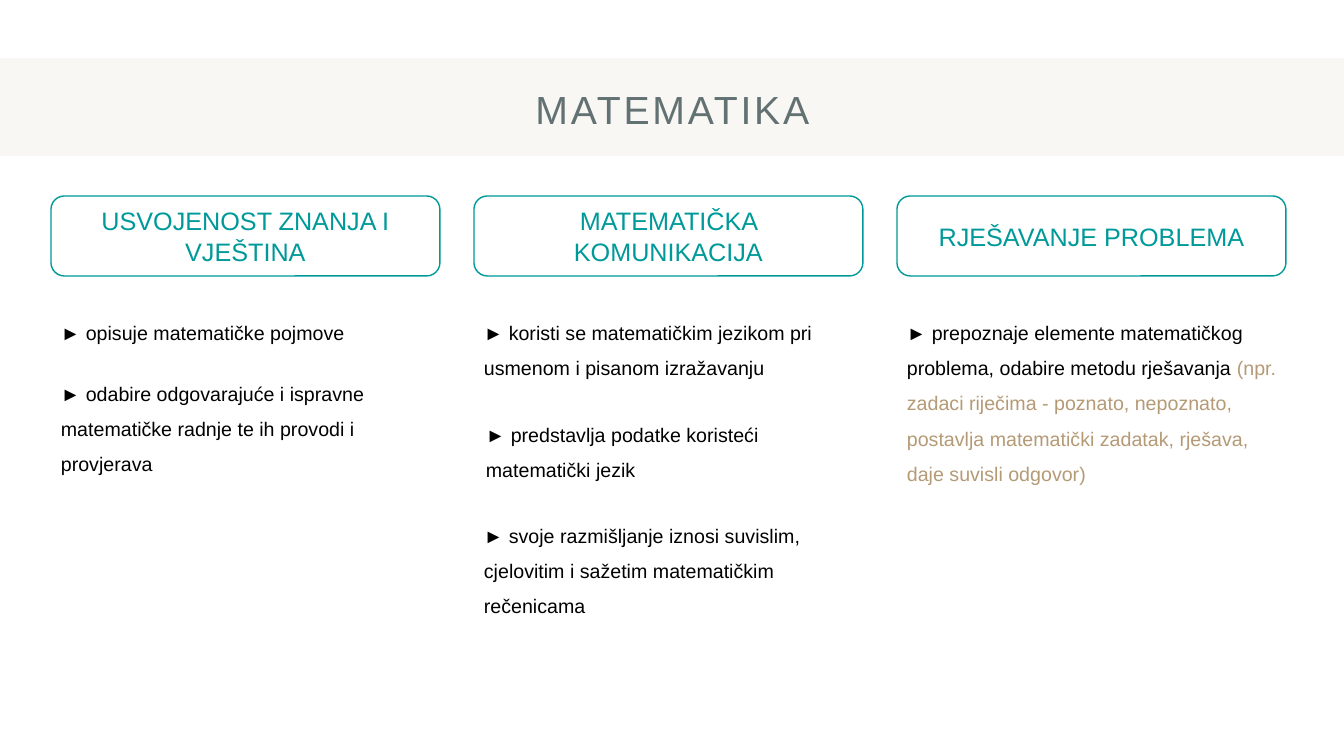
from lxml.etree import SubElement
from pptx import Presentation
from pptx.dml.color import RGBColor
from pptx.enum.shapes import MSO_SHAPE as Shape
from pptx.enum.text import MSO_ANCHOR as Anchor, MSO_AUTO_SIZE as AutoSize, PP_ALIGN as Align
from pptx.oxml.ns import qn
from pptx.util import Emu, Pt

SAND = RGBColor(0xD8, 0xCA, 0xB7)
SLATE = RGBColor(0x62, 0x72, 0x72)
TEAL = RGBColor(0x00, 0x99, 0x99)
BLACK = RGBColor(0x00, 0x00, 0x00)
TAN = RGBColor(0xB5, 0x9A, 0x76)

SLIDE_WIDTH, SLIDE_HEIGHT = 1344, 756
COLUMN_LEFT, COLUMN_PITCH, COLUMN_WIDTH = 51, 423, 389
HEADING_TOP, HEADING_HEIGHT = 196, 80

# Each column: heading, statement width, statements.
# Each statement: indent, top, height, main text, example text.
COLUMNS = [
    ("USVOJENOST ZNANJA I VJEŠTINA", 386, [
        (0, 304, 41, "► opisuje matematičke pojmove", ""),
        (0, 365, 113, "► odabire odgovarajuće i ispravne matematičke radnje "
                      "te ih provodi i provjerava", ""),
    ]),
    ("MATEMATIČKA KOMUNIKACIJA", 386, [
        (0, 304, 77, "► koristi se matematičkim jezikom pri usmenom i pisanom "
                     "izražavanju", ""),
        (2, 406, 77, "► predstavlja podatke koristeći matematički jezik", ""),
        (0, 507, 113, "► svoje razmišljanje iznosi suvislim, cjelovitim i sažetim "
                      "matematičkim rečenicama", ""),
    ]),
    ("RJEŠAVANJE PROBLEMA", 403, [
        (0, 304, 183, "► prepoznaje elemente matematičkog problema, odabire metodu "
                      "rješavanja ",
         "(npr. zadaci riječima - poznato, nepoznato, postavlja matematički "
         "zadatak, rješava, daje suvisli odgovor)"),
    ]),
]


def px(length):
    return Emu(round(length * 914400 / 100.8))


class SlideBuilder:
    font_name = "Arial"

    def __init__(self, slide):
        self.slide = slide

    def style_run(self, run, size, color):
        run.font.name = self.font_name
        run.font.size = Pt(size)
        run.font.color.rgb = color

    def center_text(self, frame, text, size, color):
        frame.text = text
        frame.word_wrap = True
        frame.vertical_anchor = Anchor.MIDDLE
        paragraph = frame.paragraphs[0]
        paragraph.alignment = Align.CENTER
        self.style_run(paragraph.runs[0], size, color)
        return paragraph.runs[0]

    def band(self, top, height, color, opacity):
        """Add a full-width translucent strip behind everything else."""
        strip = self.slide.shapes.add_shape(
            Shape.RECTANGLE, 0, px(top), px(SLIDE_WIDTH), px(height))
        strip.shadow.inherit = False
        strip.line.fill.background()
        strip.fill.solid()
        strip.fill.fore_color.rgb = color
        srgb = strip._element.spPr.find(".//" + qn("a:srgbClr"))
        SubElement(srgb, qn("a:alpha"), val=str(opacity * 1000))
        self.slide.shapes._spTree.insert(2, strip._element)

    def title(self, text, left, top, width, height):
        heading = self.slide.shapes.title
        heading.left, heading.top = px(left), px(top)
        heading.width, heading.height = px(width), px(height)
        run = self.center_text(heading.text_frame, text, 28, SLATE)
        heading.text_frame.auto_size = AutoSize.NONE
        run.font._element.set("spc", "200")

    def column_heading(self, text, left):
        frame = self.slide.shapes.add_shape(
            Shape.ROUNDED_RECTANGLE, px(left), px(HEADING_TOP),
            px(COLUMN_WIDTH), px(HEADING_HEIGHT))
        frame.shadow.inherit = False
        frame.fill.background()
        frame.line.color.rgb = TEAL
        frame.line.width = Pt(1)
        self.center_text(frame.text_frame, text, 18, TEAL)

    def statement(self, text, example, left, top, width, height):
        box = self.slide.shapes.add_textbox(px(left), px(top), px(width), px(height))
        box.text_frame.word_wrap = True
        box.text_frame.auto_size = AutoSize.SHAPE_TO_FIT_TEXT
        paragraph = box.text_frame.paragraphs[0]
        paragraph.line_spacing = 1.5
        for part, color in ((text, BLACK), (example, TAN)):
            if part:
                run = paragraph.add_run()
                run.text = part
                self.style_run(run, 14, color)


def main():
    deck = Presentation()
    deck.slide_width, deck.slide_height = px(SLIDE_WIDTH), px(SLIDE_HEIGHT)
    builder = SlideBuilder(deck.slides.add_slide(deck.slide_layouts[5]))

    builder.band(58, 98, SAND, 15)
    builder.title("MATEMATIKA", 93, 69, 1159, 80)
    for index, (heading, width, statements) in enumerate(COLUMNS):
        left = COLUMN_LEFT + index * COLUMN_PITCH
        builder.column_heading(heading, left)
        for indent, top, height, text, example in statements:
            builder.statement(text, example, left + indent, top, width, height)

    deck.save("out.pptx")


if __name__ == "__main__":
    main()
